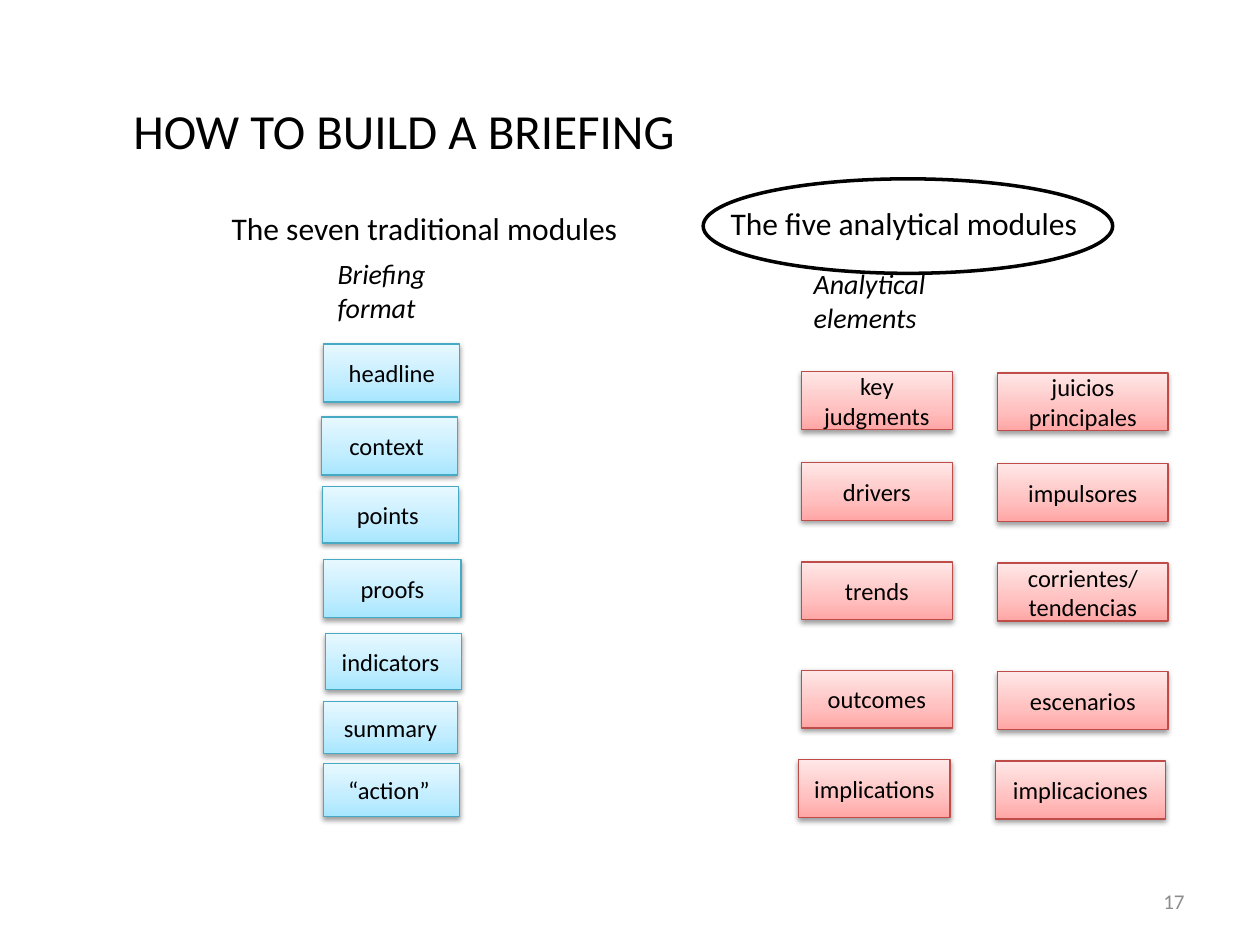
from dataclasses import dataclass

from lxml.etree import SubElement
from pptx import Presentation
from pptx.dml.color import RGBColor
from pptx.enum.shapes import MSO_SHAPE as Shape
from pptx.enum.text import MSO_ANCHOR as Anchor, MSO_AUTO_SIZE as Auto, PP_ALIGN as Align
from pptx.oxml.ns import qn
from pptx.util import Pt


@dataclass(frozen=True)
class Theme:
    font: str = "Calibri"
    ink: str = "000000"
    muted: str = "8C8C8C"
    title: int = 28
    heading: int = 18
    subheading: int = 16
    label: int = 14
    footer: int = 12
    blue: tuple = ("46AAC5", ("A7E6FF", "C1EDFF", "E7F8FF"))
    red: tuple = ("BF4C48", ("FFA6A5", "FFC0BF", "FFE7E7"))
    stops: tuple = (0, 35000, 100000)


T = Theme()

TRADITIONAL = [
    ("headline", 185, 196.6, 77.8, 33.1),
    ("context ", 183.6, 238.3, 77.8, 33.1),
    ("points ", 184.3, 277.9, 77.8, 32.4),
    ("proofs", 185, 319.7, 78.5, 33.1),
    ("indicators ", 185.8, 362.2, 77.8, 31.7),
    ("summary", 185, 401, 76.3, 29.5),
    ("“action” ", 185, 436.3, 77.8, 30.2),
]
ANALYTICAL = [
    ("key judgments", "juicios principales", 212.4, 0),
    ("drivers", "impulsores", 264.2, 0),
    ("trends", "corrientes/ tendencias", 321.1, 0),
    ("outcomes", "escenarios", 383, 0),
    ("implications", "implicaciones", 434.2, -1.4),
]
ENGLISH_X, ENGLISH_W = 457.9, 86.4
SPANISH_X, SPANISH_W, SPANISH_DROP = 570.2, 97.2, 0.7
RED_H = 33.1

HEADINGS = [
    ("HOW TO BUILD A BRIEFING", (69.1, 54, 450, 41), T.title, True, False),
    ("The seven traditional modules", (125.3, 115.9, 237.6, 28.8), T.heading, False, False),
    ("The five analytical modules", (410.4, 113, 215.3, 28.8), T.heading, False, False),
    ("Briefing\nformat", (185.8, 143.3, 65.5, 46.1), T.subheading, False, True),
    ("Analytical\nelements", (457.9, 149, 79.2, 46.1), T.subheading, False, True),
]
RING = (401.8, 102.2, 234, 54)
PAGE_NUMBER = ("17", (516.2, 500.4, 167.8, 28.8))


def rgb(value):
    return RGBColor.from_string(value)


def write(tf, text, size, color=T.ink, align=None, italic=None):
    p = tf.paragraphs[0]
    p.alignment = align
    for i, line in enumerate(text.split("\n")):
        if i:
            p.add_line_break()
        r = p.add_run()
        r.text = line
        r.font.name, r.font.size, r.font.italic = T.font, Pt(size), italic
        r.font.color.rgb = rgb(color)


def add_text(s, text, box, size, wrap, italic):
    tf = s.shapes.add_textbox(*map(Pt, box)).text_frame
    tf.word_wrap = wrap
    tf.auto_size = Auto.SHAPE_TO_FIT_TEXT
    write(tf, text, size, italic=italic or None)


def add_shadow(sp):
    sp.shadow.inherit = False
    effects = sp._element.spPr.find(qn("a:effectLst"))
    shadow = SubElement(effects, qn("a:outerShdw"), blurRad=str(Pt(3.1)),
                        dist=str(Pt(1.6)), dir="5400000", rotWithShape="0")
    color = SubElement(shadow, qn("a:srgbClr"), val=T.ink)
    SubElement(color, qn("a:alpha"), val="38000")


def add_module(s, text, box, palette):
    edge, shades = palette
    sp = s.shapes.add_shape(Shape.RECTANGLE, *map(Pt, box))
    sp.fill.gradient()
    sp.fill.gradient_angle = 90
    stops = sp._element.spPr.find(qn("a:gradFill")).find(qn("a:gsLst"))
    stops.clear()
    for pos, shade in zip(T.stops, shades):
        stop = SubElement(stops, qn("a:gs"), pos=str(pos))
        SubElement(stop, qn("a:srgbClr"), val=shade)
    sp.line.color.rgb = rgb(edge)
    sp.line.width = Pt(0.75)
    add_shadow(sp)
    tf = sp.text_frame
    tf.word_wrap = True
    tf.vertical_anchor = Anchor.MIDDLE
    write(tf, text, T.label, align=Align.CENTER)


def add_ring(s):
    sp = s.shapes.add_shape(Shape.OVAL, *map(Pt, RING))
    sp.shadow.inherit = False
    sp.fill.background()
    sp.line.color.rgb = rgb(T.ink)
    sp.line.width = Pt(2)


def add_page_number(s):
    text, box = PAGE_NUMBER
    tf = s.shapes.add_textbox(*map(Pt, box)).text_frame
    tf.word_wrap = True
    tf.vertical_anchor = Anchor.MIDDLE
    write(tf, text, T.footer, T.muted, Align.RIGHT)


def main():
    prs = Presentation()
    prs.slide_width, prs.slide_height = Pt(720), Pt(540)
    s = prs.slides.add_slide(prs.slide_layouts[6])
    for text, *box in TRADITIONAL:
        add_module(s, text, box, T.blue)
    for english, spanish, y, shift in ANALYTICAL:
        add_module(s, english, (ENGLISH_X + shift, y, ENGLISH_W, RED_H), T.red)
        add_module(s, spanish, (SPANISH_X + shift, y + SPANISH_DROP, SPANISH_W, RED_H), T.red)
    for heading in HEADINGS:
        add_text(s, *heading)
    add_ring(s)
    add_page_number(s)
    prs.save("out.pptx")


if __name__ == "__main__":
    main()
